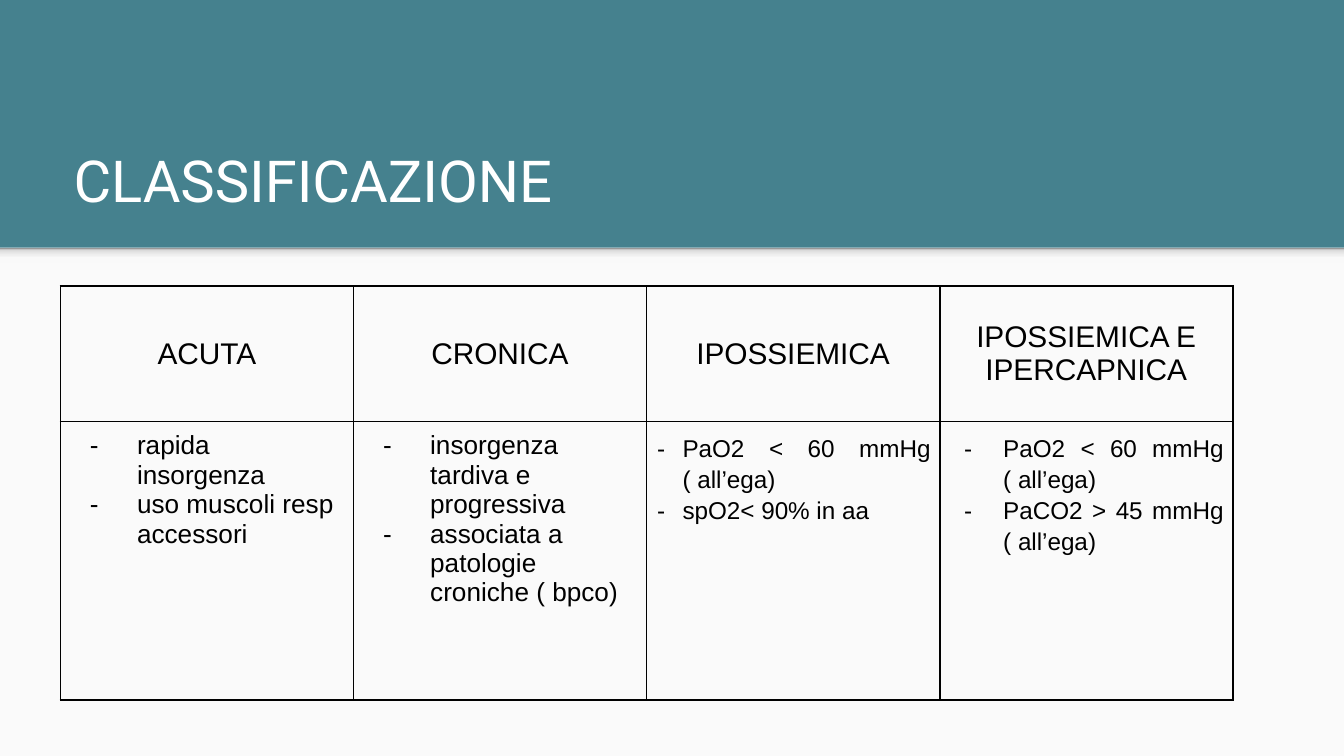
from dataclasses import dataclass

from lxml import etree
from pptx import Presentation
from pptx.dml.color import RGBColor
from pptx.enum import shapes, text
from pptx.oxml import parse_xml
from pptx.oxml.ns import nsdecls, qn
from pptx.util import Cm, Pt

COLORS = {
    "teal": "45818E",
    "paper": "FAFAFA",
    "white": "FFFFFF",
    "black": "000000",
}
SHADE_STOPS = [(0, "F9F9F9"), (36, "F9F9F9"), (80, "DEDEDE"), (100, "999999")]
PAGE_WIDTH, PAGE_HEIGHT = Cm(25.4), Cm(14.29)
BODY_TOP = Cm(4.68)
COLUMN_WIDTH = Cm(5.54)
ROW_HEIGHTS = [Cm(2.56), Cm(5.26)]
CELL_MARGIN = Cm(0.18)


@dataclass
class Column:
    heading: str
    items: list[str]
    size: float
    indent: float
    hanging: float
    justified: bool = False


COLUMNS = [
    Column("ACUTA", ["rapida insorgenza", "uso muscoli resp accessori"],
           14, 1.27, 0.89),
    Column("CRONICA", ["insorgenza tardiva e progressiva",
                       "associata a patologie croniche ( bpco)"],
           14, 1.27, 0.89),
    Column("IPOSSIEMICA", ["PaO2 < 60 mmHg ( all’ega)", "spO2< 90% in aa "],
           13, 0.5, 0.48, True),
    Column("IPOSSIEMICA E IPERCAPNICA",
           ["PaO2 < 60 mmHg ( all’ega)", "PaCO2 > 45 mmHg ( all’ega)"],
           13, 1.02, 0.74, True),
]


def color(name: str) -> RGBColor:
    return RGBColor.from_string(COLORS[name])


def write(paragraph, content: str, *, size: float, font: str = "Arial",
          fill: str = "black", align=text.PP_ALIGN.LEFT,
          spacing: float = 1.0) -> None:
    run = paragraph.add_run()
    run.text = content
    run.font.size = Pt(size)
    run.font.name = font
    run.font.color.rgb = color(fill)
    paragraph.alignment = align
    paragraph.line_spacing = spacing


def add_dash(paragraph, indent: float, hanging: float) -> None:
    properties = paragraph._p.get_or_add_pPr()
    properties.set("marL", str(Cm(indent)))
    properties.set("indent", str(-Cm(hanging)))
    bullet_color = etree.SubElement(properties, qn("a:buClr"))
    etree.SubElement(bullet_color, qn("a:srgbClr"), val=COLORS["black"])
    etree.SubElement(properties, qn("a:buFont"), typeface="Arial")
    etree.SubElement(properties, qn("a:buChar"), char="-")


def add_band(slide, height: int):
    shape = slide.shapes.add_shape(
        shapes.MSO_SHAPE.RECTANGLE, 0, BODY_TOP, PAGE_WIDTH, height)
    shape.shadow.inherit = False
    shape.line.fill.background()
    return shape


def shade(shape) -> None:
    shape.fill.gradient()
    shape.fill.gradient_angle = 90
    stops = shape._element.spPr.find(qn("a:gradFill")).find(qn("a:gsLst"))
    for stop in list(stops):
        stops.remove(stop)
    for position, value in SHADE_STOPS:
        stops.append(parse_xml(
            f'<a:gs {nsdecls("a")} pos="{position * 1000}">'
            f'<a:srgbClr val="{value}"/></a:gs>'))


def format_cell(cell) -> None:
    cell.margin_left = cell.margin_right = CELL_MARGIN
    cell.margin_top = cell.margin_bottom = CELL_MARGIN
    properties = cell._tc.get_or_add_tcPr()
    for side in ("lnL", "lnR", "lnT", "lnB"):
        properties.append(parse_xml(
            f'<a:{side} {nsdecls("a")} w="{Pt(1)}"><a:solidFill>'
            f'<a:srgbClr val="{COLORS["black"]}"/></a:solidFill></a:{side}>'))
    cell.fill.background()


def fill_column(table, index: int, column: Column) -> None:
    table.columns[index].width = COLUMN_WIDTH
    heading, body = table.cell(0, index), table.cell(1, index)
    for cell in (heading, body):
        format_cell(cell)
    heading.vertical_anchor = text.MSO_ANCHOR.MIDDLE
    write(heading.text_frame.paragraphs[0], column.heading, size=16,
          align=text.PP_ALIGN.CENTER)
    frame = body.text_frame
    for number, item in enumerate(column.items):
        paragraph = frame.add_paragraph() if number else frame.paragraphs[0]
        if column.justified:
            write(paragraph, item, size=column.size, spacing=1.15,
                  align=text.PP_ALIGN.JUSTIFY)
        else:
            write(paragraph, item, size=column.size)
        add_dash(paragraph, column.indent, column.hanging)


def main() -> None:
    presentation = Presentation()
    presentation.slide_width, presentation.slide_height = PAGE_WIDTH, PAGE_HEIGHT
    slide = presentation.slides.add_slide(presentation.slide_layouts[5])

    # Background: teal header, pale body and a soft edge between them
    slide.background.fill.solid()
    slide.background.fill.fore_color.rgb = color("teal")
    body = add_band(slide, PAGE_HEIGHT - BODY_TOP)
    body.fill.solid()
    body.fill.fore_color.rgb = color("paper")
    shade(add_band(slide, Cm(0.3)))

    # Title
    title = slide.shapes.title
    title.left, title.top = Cm(1.14), Cm(2.16)
    title.width, title.height = Cm(22.83), Cm(2.13)
    frame = title.text_frame
    frame.margin_left = frame.margin_right = Cm(0.25)
    frame.margin_top = frame.margin_bottom = Cm(0.25)
    frame.vertical_anchor = text.MSO_ANCHOR.BOTTOM
    frame.auto_size = text.MSO_AUTO_SIZE.NONE
    write(frame.paragraphs[0], "CLASSIFICAZIONE", size=31, font="Roboto",
          fill="white")

    # Classification table
    table = slide.shapes.add_table(
        len(ROW_HEIGHTS), len(COLUMNS), Cm(1.14), Cm(5.41),
        COLUMN_WIDTH * len(COLUMNS), sum(ROW_HEIGHTS)).table
    table.first_row = table.horz_banding = False
    for row, height in zip(table.rows, ROW_HEIGHTS):
        row.height = height
    for index, column in enumerate(COLUMNS):
        fill_column(table, index, column)

    presentation.save("out.pptx")


if __name__ == "__main__":
    main()
